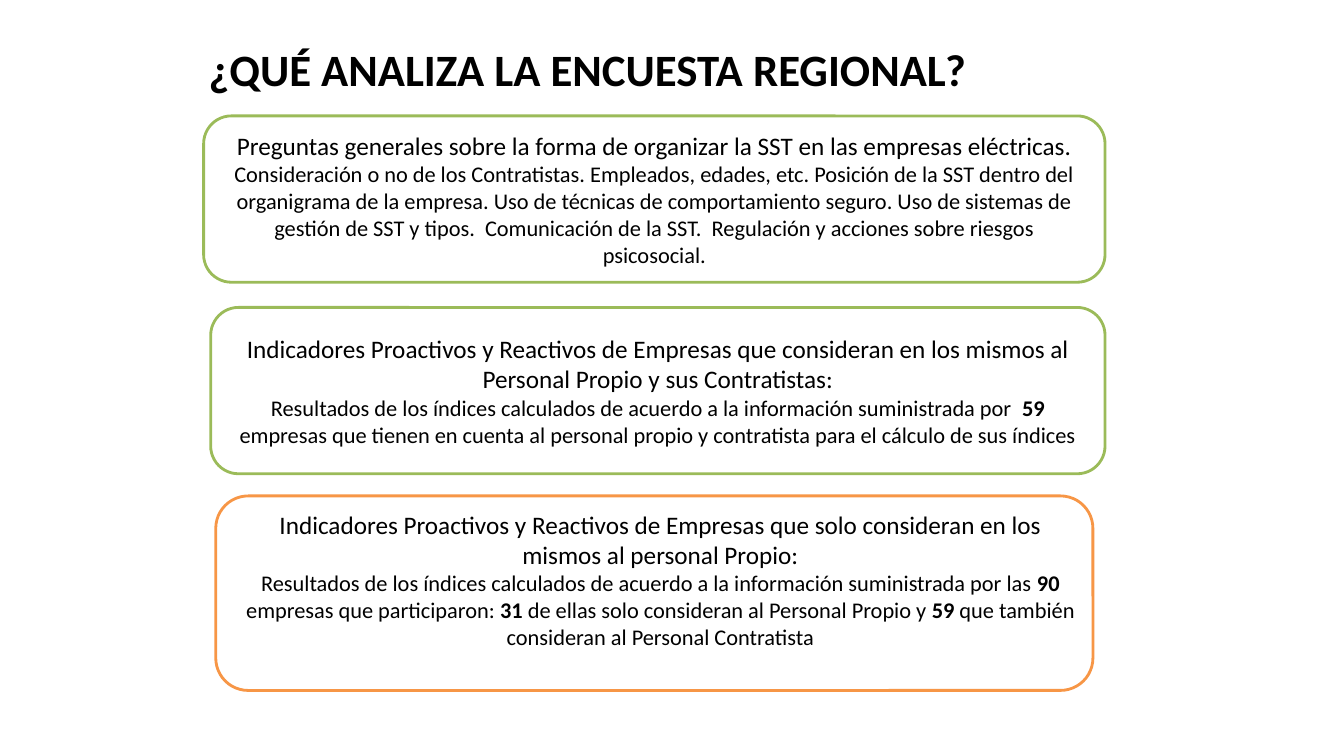
from pptx import Presentation
from pptx.dml.color import RGBColor
from pptx.enum.shapes import MSO_SHAPE
from pptx.enum.text import MSO_ANCHOR, PP_ALIGN
from pptx.util import Inches, Pt

BLACK = RGBColor(0x00, 0x00, 0x00)
WHITE = RGBColor(0xFF, 0xFF, 0xFF)
GREEN = RGBColor(0x9B, 0xBB, 0x59)
ORANGE = RGBColor(0xF7, 0x96, 0x46)

TITLE = {"size": Pt(32), "bold": True}
LEAD = {"size": Pt(18), "bold": False}
BODY = {"size": Pt(16), "bold": False}
STRONG = {"size": Pt(16), "bold": True}

GENERAL = [
    [("Preguntas generales sobre la forma de organizar la SST en las empresas eléctricas. ", LEAD),
     ("Consideración o no de los Contratistas. Empleados, edades, etc. Posición de la SST "
      "dentro del organigrama de la empresa. Uso de técnicas de comportamiento seguro. "
      "Uso de sistemas de gestión de SST y tipos.  Comunicación de la SST.  "
      "Regulación y acciones sobre riesgos psicosocial.", BODY)],
]
WITH_CONTRACTORS = [
    [("Indicadores Proactivos y Reactivos de Empresas que consideran en los mismos al "
      "Personal Propio y sus Contratistas:", LEAD)],
    [("Resultados de los índices calculados de acuerdo a la información suministrada por ", BODY),
     (" 59 ", STRONG),
     ("empresas que tienen en cuenta al personal propio y contratista para el cálculo "
      "de sus índices", BODY)],
]
OWN_STAFF = [
    [("Indicadores Proactivos y Reactivos de Empresas que solo consideran en los mismos al "
      "personal Propio:", LEAD)],
    [("Resultados de los índices calculados de acuerdo a la información suministrada por las ", BODY),
     ("90", STRONG),
     (" empresas que participaron: ", BODY),
     ("31", STRONG),
     (" de ellas solo consideran al Personal Propio y ", BODY),
     ("59", STRONG),
     (" que también consideran al Personal Contratista", BODY)],
]


def write(tf, paragraphs, align, anchor):
    tf.word_wrap = True
    tf.vertical_anchor = anchor
    for i, runs in enumerate(paragraphs):
        p = tf.paragraphs[0] if i == 0 else tf.add_paragraph()
        p.alignment = align
        for text, style in runs:
            r = p.add_run()
            r.text = text
            r.font.color.rgb = BLACK
            for name, value in {"name": "Calibri", **style}.items():
                setattr(r.font, name, value)


def add_text(s, box, paragraphs, align, anchor):
    tb = s.shapes.add_textbox(*map(Inches, box))
    write(tb.text_frame, paragraphs, align, anchor)


def add_panel(s, box, color):
    sp = s.shapes.add_shape(MSO_SHAPE.ROUNDED_RECTANGLE, *map(Inches, box))
    sp.shadow.inherit = False
    sp.fill.solid()
    sp.fill.fore_color.rgb = WHITE
    sp.line.color.rgb = color
    sp.line.width = Pt(2)
    return sp


def add_text_panel(s, box, color, paragraphs):
    sp = add_panel(s, box, color)
    write(sp.text_frame, paragraphs, PP_ALIGN.CENTER, MSO_ANCHOR.MIDDLE)


def add_own_staff_panel(s, box):
    """Panel whose text starts at the top, in a text box of its own."""
    left, top, width, height = box
    add_panel(s, box, ORANGE)
    add_text(s, (left + 0.12, top + 0.08, width - 0.12, height - 0.42),
             OWN_STAFF, PP_ALIGN.CENTER, MSO_ANCHOR.TOP)


def main():
    prs = Presentation()
    prs.slide_width, prs.slide_height = Inches(13.33), Inches(7.5)
    s = prs.slides.add_slide(prs.slide_layouts[6])
    add_text(s, (1.97, 0.29, 9, 0.79), [[("¿QUÉ ANALIZA LA ENCUESTA REGIONAL?", TITLE)]],
             PP_ALIGN.LEFT, MSO_ANCHOR.MIDDLE)
    add_text_panel(s, (2.02, 1.15, 8.94, 1.65), GREEN, GENERAL)
    add_text_panel(s, (2.09, 3.05, 8.87, 1.65), GREEN, WITH_CONTRACTORS)
    add_own_staff_panel(s, (2.14, 4.92, 8.7, 1.93))
    prs.save("out.pptx")


if __name__ == "__main__":
    main()
